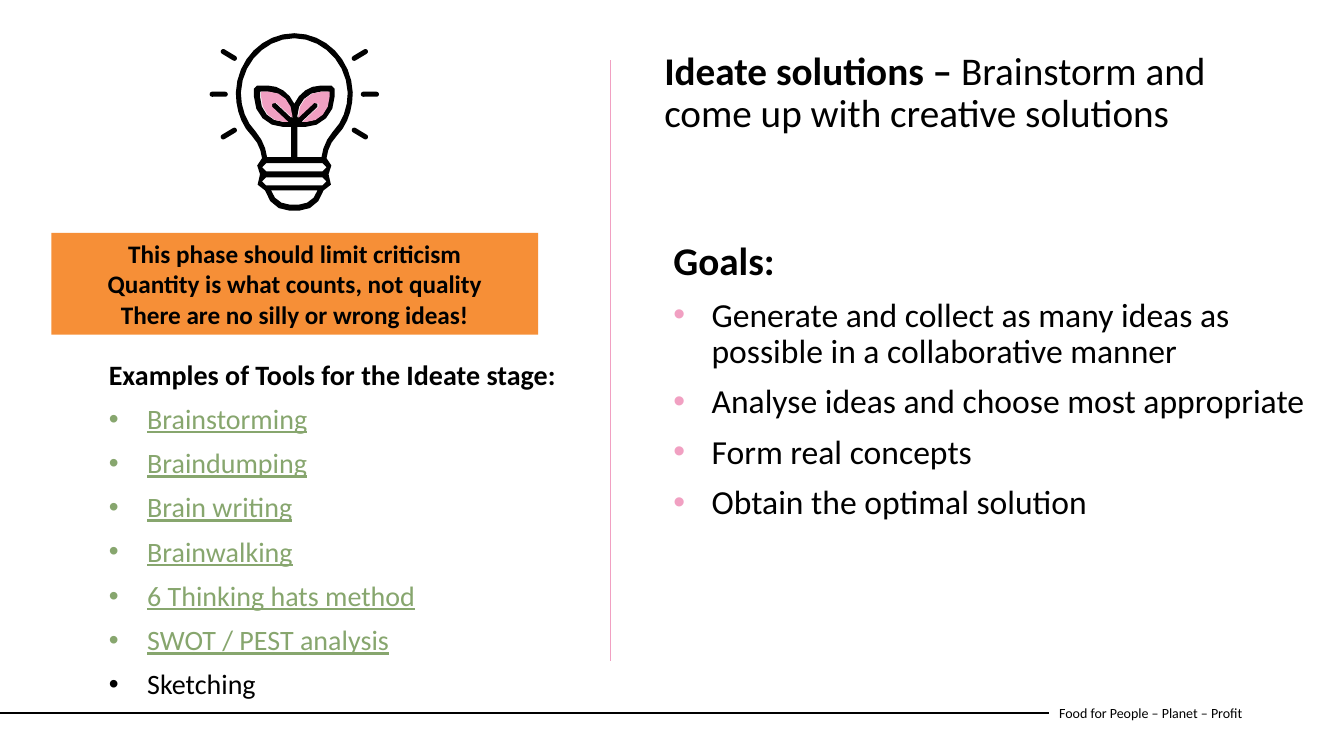
from dataclasses import dataclass
from math import dist

from lxml.etree import SubElement
from pptx import Presentation
from pptx.dml.color import RGBColor
from pptx.enum.shapes import MSO_CONNECTOR, MSO_SHAPE
from pptx.enum.text import MSO_ANCHOR, MSO_AUTO_SIZE, PP_ALIGN
from pptx.oxml.ns import qn
from pptx.util import Inches, Pt

COLORS = {"black": "000000", "ink": "010101", "pink": "F1A0C2",
          "green": "87A66E", "orange": "F68F37"}
FONT = "Calibri"
BULB_AXIS = 2.92
HANG = 0.38

Point = tuple[float, float]


@dataclass
class Run:
    text: str
    size: float
    bold: bool = False
    color: str = "black"
    underline: bool = False


@dataclass
class Line:
    runs: list[Run]
    bullet: str | None = None  # bullet colour, None for no bullet


@dataclass
class Ray:
    offset: float  # centre, measured from the bulb axis
    y: float
    angle: float


def rgb(name: str) -> RGBColor:
    return RGBColor.from_string(COLORS[name])


def place(shape, left: float, top: float, width: float, height: float) -> None:
    shape.left, shape.top = Inches(left), Inches(top)
    shape.width, shape.height = Inches(width), Inches(height)


def add_run(paragraph, run: Run) -> None:
    piece = paragraph.add_run()
    piece.text = run.text
    font = piece.font
    font.name, font.size, font.bold = FONT, Pt(run.size), run.bold
    font.underline = run.underline
    font.color.rgb = rgb(run.color)


def set_bullet(paragraph, color: str | None) -> None:
    props = paragraph._p.get_or_add_pPr()
    indent = Inches(HANG) if color else 0
    props.set("marL", str(indent))
    props.set("indent", str(-indent))
    if color is None:
        SubElement(props, qn("a:buNone"))
        return
    SubElement(SubElement(props, qn("a:buClr")), qn("a:srgbClr")).set("val", COLORS[color])
    SubElement(props, qn("a:buFont")).set("typeface", "Arial")
    SubElement(props, qn("a:buChar")).set("char", "•")


def fill_placeholder(holder, lines: list[Line]) -> None:
    frame = holder.text_frame
    frame.word_wrap = True
    frame.auto_size = MSO_AUTO_SIZE.NONE
    frame.vertical_anchor = MSO_ANCHOR.TOP
    for i, line in enumerate(lines):
        paragraph = frame.add_paragraph() if i else frame.paragraphs[0]
        paragraph.alignment = PP_ALIGN.LEFT
        paragraph.line_spacing = 0.9
        paragraph.space_before = Pt(10)
        set_bullet(paragraph, line.bullet)
        for run in line.runs:
            add_run(paragraph, run)


def add_rule(shapes, start: Point, end: Point, color: str, width: float):
    rule = shapes.add_connector(MSO_CONNECTOR.STRAIGHT, *(Inches(v) for v in start + end))
    rule.line.color.rgb = rgb(color)
    rule.line.width = Pt(width)
    SubElement(rule._element.spPr, qn("a:effectLst"))
    return rule


def paint(shape, color: str) -> None:
    shape.shadow.inherit = False
    shape.fill.solid()
    shape.fill.fore_color.rgb = rgb(color)
    shape.line.fill.background()


def trace(steps: list[tuple[float, ...]]) -> list[Point]:
    """Turn points (2 numbers) and cubic curves (6 numbers) into a polyline."""
    points: list[Point] = [steps[0]]
    for step in steps[1:]:
        if len(step) == 2:
            points.append(step)
            continue
        x0, y0 = points[-1]
        x1, y1, x2, y2, x3, y3 = step
        # Longer curves get more pieces
        pieces = 1 + round(8 * dist((x0, y0), (x3, y3)))
        for k in range(1, pieces + 1):
            t = k / pieces
            a, b, c, d = (1 - t) ** 3, 3 * t * (1 - t) ** 2, 3 * t * t * (1 - t), t ** 3
            points.append((a * x0 + b * x1 + c * x2 + d * x3,
                           a * y0 + b * y1 + c * y2 + d * y3))
    return points


def mirror(points: list[Point]) -> list[Point]:
    return [(-x, y) for x, y in reversed(points)]


def add_outline(shapes, contours: list[list[Point]], color: str, axis: float) -> None:
    scaled = [[(Inches(axis + x), Inches(y)) for x, y in contour] for contour in contours]
    builder = shapes.build_freeform(*scaled[0][0], scale=1.0)
    for i, contour in enumerate(scaled):
        if i:
            builder.move_to(*contour[0])
        builder.add_line_segments(contour[1:], close=True)
    paint(builder.convert_to_shape(), color)


# Right halves of the bulb, as offsets from its axis
GLASS_OUTER = [(0, 0.33), (0.31, 0.33, 0.57, 0.59, 0.58, 0.92),
               (0.58, 1.08, 0.53, 1.24, 0.42, 1.35), (0.36, 1.41, 0.33, 1.49, 0.32, 1.57),
               (0.37, 1.6, 0.39, 1.68, 0.34, 1.73), (0.4, 1.79, 0.36, 1.89, 0.29, 1.89),
               (0.26, 2.01, 0.16, 2.09, 0.05, 2.09)]
GLASS_INNER = [(0, 0.38), (0.28, 0.38, 0.52, 0.62, 0.53, 0.92),
               (0.53, 1.07, 0.48, 1.21, 0.38, 1.31), (0.32, 1.38, 0.28, 1.47, 0.27, 1.56),
               (0.03, 1.56), (0.03, 1.26), (0.11, 1.26), (0.27, 1.26, 0.4, 1.13, 0.4, 0.96),
               (0.4, 0.88), (0.4, 0.86, 0.38, 0.85, 0.37, 0.85), (0.26, 0.85),
               (0.15, 0.85, 0.05, 0.92, 0, 1.03)]
CAP = [(0.23, 1.89), (0.21, 1.97, 0.13, 2.03, 0.05, 2.03)]
LEAF = [(0.23, 1.03), (0.22, 1.01, 0.21, 1.01, 0.19, 1.02), (0.03, 1.17), (0.03, 1.15),
        (0.03, 1.02, 0.13, 0.91, 0.26, 0.91), (0.34, 0.91), (0.34, 0.96),
        (0.34, 1.1, 0.24, 1.21, 0.11, 1.21), (0.07, 1.21), (0.23, 1.06),
        (0.24, 1.05, 0.24, 1.04, 0.23, 1.03)]
RINGS = [[(0.28, y), (0.3, y, 0.32, y + 0.02, 0.32, y + 0.04),
          (0.32, y + 0.06, 0.3, y + 0.08, 0.28, y + 0.08)] for y in (1.62, 1.76)]
RAYS = [Ray(side * offset, y, side * angle) for side in (-1, 1)
        for offset, y, angle in ((0.75, 0.93, 0), (0.65, 1.32, 31), (0.65, 0.54, -31))]


def add_bulb(shapes) -> None:
    halves = [trace(half) for half in (GLASS_OUTER, GLASS_INNER, CAP, *RINGS)]
    leaf = trace(LEAF)
    leaves = [leaf, mirror(leaf)]
    add_outline(shapes, [half + mirror(half) for half in halves] + leaves, "ink", BULB_AXIS)
    for ray in RAYS:
        bar = shapes.add_shape(MSO_SHAPE.ROUNDED_RECTANGLE, 0, 0, 0, 0)
        place(bar, BULB_AXIS + ray.offset - 0.09, ray.y - 0.02, 0.18, 0.05)
        bar.adjustments[0] = 0.5
        bar.rotation = ray.angle
        paint(bar, "ink")
    for side in leaves:
        add_outline(shapes, [side], "pink", BULB_AXIS + 0.01)


GOALS = ["Generate and collect as many ideas as possible in a collaborative manner",
         "Analyse ideas and choose most appropriate",
         "Form real concepts", "Obtain the optimal solution"]
LINKED_TOOLS = ["Brainstorming", "Braindumping", "Brain writing", "Brainwalking",
                "6 Thinking hats method", "SWOT / PEST analysis"]
ADVICE = ["This phase should limit criticism", "Quantity is what counts, not quality",
          "There are no silly or wrong ideas!"]


def main() -> None:
    deck = Presentation()
    deck.slide_width, deck.slide_height = Inches(40 / 3), Inches(7.5)
    slide = deck.slides.add_slide(deck.slide_layouts[3])
    shapes = slide.shapes
    heading, goals, tools = slide.placeholders

    # Footer and its rule
    footer = shapes.add_textbox(Inches(10.41), Inches(6.87), Inches(2.73), Inches(0.4))
    footer.text_frame.word_wrap = True
    footer.text_frame.vertical_anchor = MSO_ANCHOR.MIDDLE
    add_run(footer.text_frame.paragraphs[0], Run("Food for People – Planet – Profit", 10))
    add_rule(shapes, (0, 7.07), (10.41, 7.07), "black", 1.5).end_connect(footer, 1)

    # Heading, goals and tools
    place(heading, 6.49, 0.46, 6.41, 1.25)
    fill_placeholder(heading, [Line([
        Run("Ideate solutions – ", 28, bold=True),
        Run("Brainstorm and come up with creative solutions", 28)])])
    place(goals, 6.58, 2.35, 6.62, 4.07)
    fill_placeholder(goals, [Line([Run("Goals:", 28, bold=True)])]
                     + [Line([Run(goal, 24)], "pink") for goal in GOALS])
    place(tools, 0.98, 3.53, 4.83, 3.76)
    fill_placeholder(tools, [Line([Run("Examples of Tools for the Ideate stage:", 20, bold=True)])]
                     + [Line([Run(tool, 20, color="green", underline=True)], "green")
                        for tool in LINKED_TOOLS]
                     + [Line([Run("Sketching", 20)], "black")])

    # Advice banner
    banner = shapes.add_shape(MSO_SHAPE.RECTANGLE, 0, 0, 0, 0)
    place(banner, 0.51, 2.31, 4.83, 1.01)
    paint(banner, "orange")
    frame = banner.text_frame
    frame.word_wrap = True
    frame.auto_size = MSO_AUTO_SIZE.SHAPE_TO_FIT_TEXT
    for i, advice in enumerate(ADVICE):
        paragraph = frame.add_paragraph() if i else frame.paragraphs[0]
        paragraph.alignment = PP_ALIGN.CENTER
        add_run(paragraph, Run(advice, 18, bold=True))

    # Light bulb and divider
    add_bulb(shapes)
    add_rule(shapes, (6.06, 0.6), (6.06, 6.56), "pink", 0.5)
    deck.save("out.pptx")


if __name__ == "__main__":
    main()
